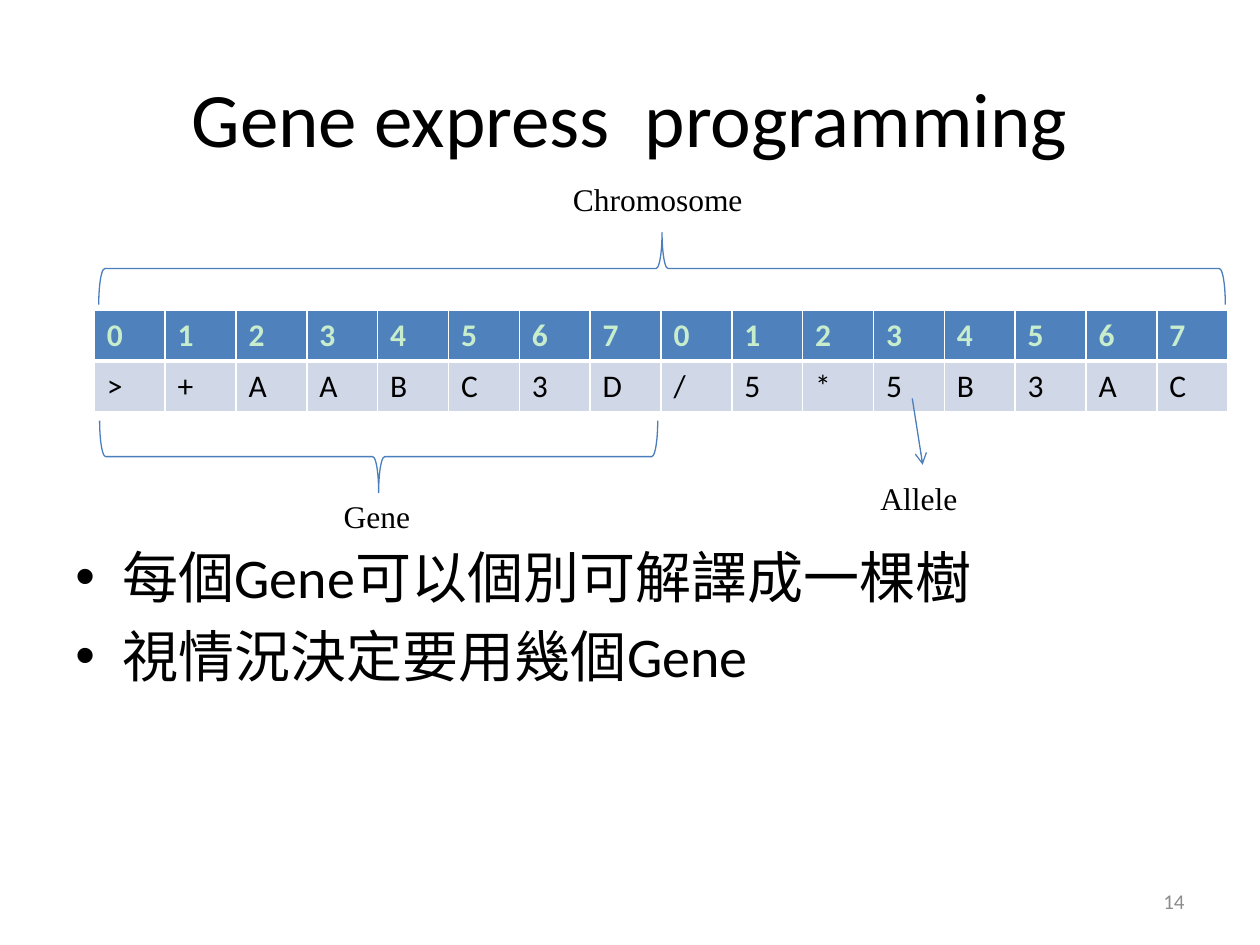
"""Build the gene expression programming slide with its chromosome table."""
from dataclasses import dataclass

from lxml.etree import SubElement
from pptx import Presentation
from pptx.dml.color import RGBColor as Color
from pptx.enum.shapes import MSO_CONNECTOR as Connector, MSO_SHAPE as Shape
from pptx.enum.text import MSO_ANCHOR as Anchor, PP_ALIGN as Align
from pptx.oxml.ns import qn
from pptx.util import Cm, Pt


@dataclass(frozen=True)
class Theme:
    sans: str = "Calibri"
    serif: str = "Times New Roman"
    ink: str = "000000"
    paper: str = "FFFFFF"
    muted: str = "8C8C8C"
    outline: str = "4B7EBC"
    header: str = "4F81BD"
    header_text: str = "C7EDCC"
    band: str = "D0D8E8"
    title: int = 44
    body: int = 32
    label: int = 18
    number: int = 12


theme = Theme()


def write(frame, text, size=theme.label, font=theme.sans, color=theme.ink, bold=False,
          align=Align.LEFT, anchor=Anchor.TOP, bullet=False):
    frame.word_wrap = True
    frame.vertical_anchor = anchor
    for index, line in enumerate(text.split("\n")):
        para = frame.add_paragraph() if index else frame.paragraphs[0]
        para.alignment = align
        span = para.add_run()
        span.text = line
        span.font.size, span.font.name, span.font.bold = Pt(size), font, bold
        span.font.color.rgb = Color.from_string(color)
        if bullet:
            para.space_before = Pt(size * 0.2 if index else 0)
            settings = para._p.get_or_add_pPr()
            settings.set("marL", str(Cm(0.95)))
            settings.set("indent", str(-Cm(0.95)))
            SubElement(settings, qn("a:buFont"), typeface="Arial")
            SubElement(settings, qn("a:buChar"), char="•")


def add_border(cell, side, width):
    settings = cell._tc.get_or_add_tcPr()
    border = SubElement(settings, qn(f"a:{side}"), w=str(Pt(width)))
    fill = SubElement(border, qn("a:solidFill"))
    SubElement(fill, qn("a:srgbClr"), val=theme.paper)


deck = Presentation()
deck.slide_width, deck.slide_height = Cm(25.4), Cm(19.05)
page = deck.slides.add_slide(deck.slide_layouts[6])
page.background.fill.solid()
page.background.fill.fore_color.rgb = Color.from_string(theme.paper)

serif_label = {"font": theme.serif}
texts = [
    ("Gene express  programming", (1.27, 0.76, 22.86, 3.18),
     {"size": theme.title, "align": Align.CENTER, "anchor": Anchor.MIDDLE}),
    ("14", (18.2, 17.66, 5.93, 1.01),
     {"size": theme.number, "color": theme.muted, "align": Align.RIGHT, "anchor": Anchor.MIDDLE}),
    ("每個Gene可以個別可解譯成一棵樹\n視情況決定要用幾個Gene", (1.27, 10.82, 22.86, 6.2),
     {"size": theme.body, "bullet": True}),
    ("Chromosome", (11.3, 3.5, 4, 1.03), serif_label),
    ("Gene", (6.68, 9.9, 2, 1.03), serif_label),
    ("Allele", (17.5, 9.53, 2.6, 1.03), serif_label),
]
for text, place, style in texts:
    box = page.shapes.add_textbox(*map(Cm, place))
    write(box.text_frame, text, **style)

positions = "01234567" * 2
symbols = ">+AABC3D/5*5B3AC"
rows = [
    (positions, theme.header, {"color": theme.header_text, "bold": True}, {"lnT": 1, "lnB": 3}),
    (symbols, theme.band, {}, {"lnT": 3, "lnB": 1}),
]
table = page.shapes.add_table(2, len(symbols), Cm(1.9), Cm(6.25), Cm(22.86), Cm(2.06)).table
for row, (letters, fill, style, edges) in enumerate(rows):
    for column, letter in enumerate(letters):
        cell = table.cell(row, column)
        write(cell.text_frame, letter, **style)
        for side, width in ({"lnL": 1, "lnR": 1} | edges).items():
            add_border(cell, side, width)
        cell.fill.solid()
        cell.fill.fore_color.rgb = Color.from_string(fill)

braces = [((6.91, 3.58, 1.45, 11.25), 270), ((12.62, -5.94, 1.45, 22.71), 90)]
for place, angle in braces:
    brace = page.shapes.add_shape(Shape.LEFT_BRACE, *map(Cm, place))
    brace.rotation = angle
    brace.shadow.inherit = False
    brace.fill.background()
    brace.line.color.rgb = Color.from_string(theme.outline)
    brace.line.width = Pt(0.75)

arrow = page.shapes.add_connector(Connector.STRAIGHT, Cm(18.39), Cm(8.03), Cm(18.6), Cm(9.37))
arrow.line.color.rgb = Color.from_string(theme.outline)
arrow.line.width = Pt(0.75)
SubElement(arrow.line._get_or_add_ln(), qn("a:tailEnd"), type="arrow")
SubElement(arrow._element.spPr, qn("a:effectLst"))

deck.save("out.pptx")
